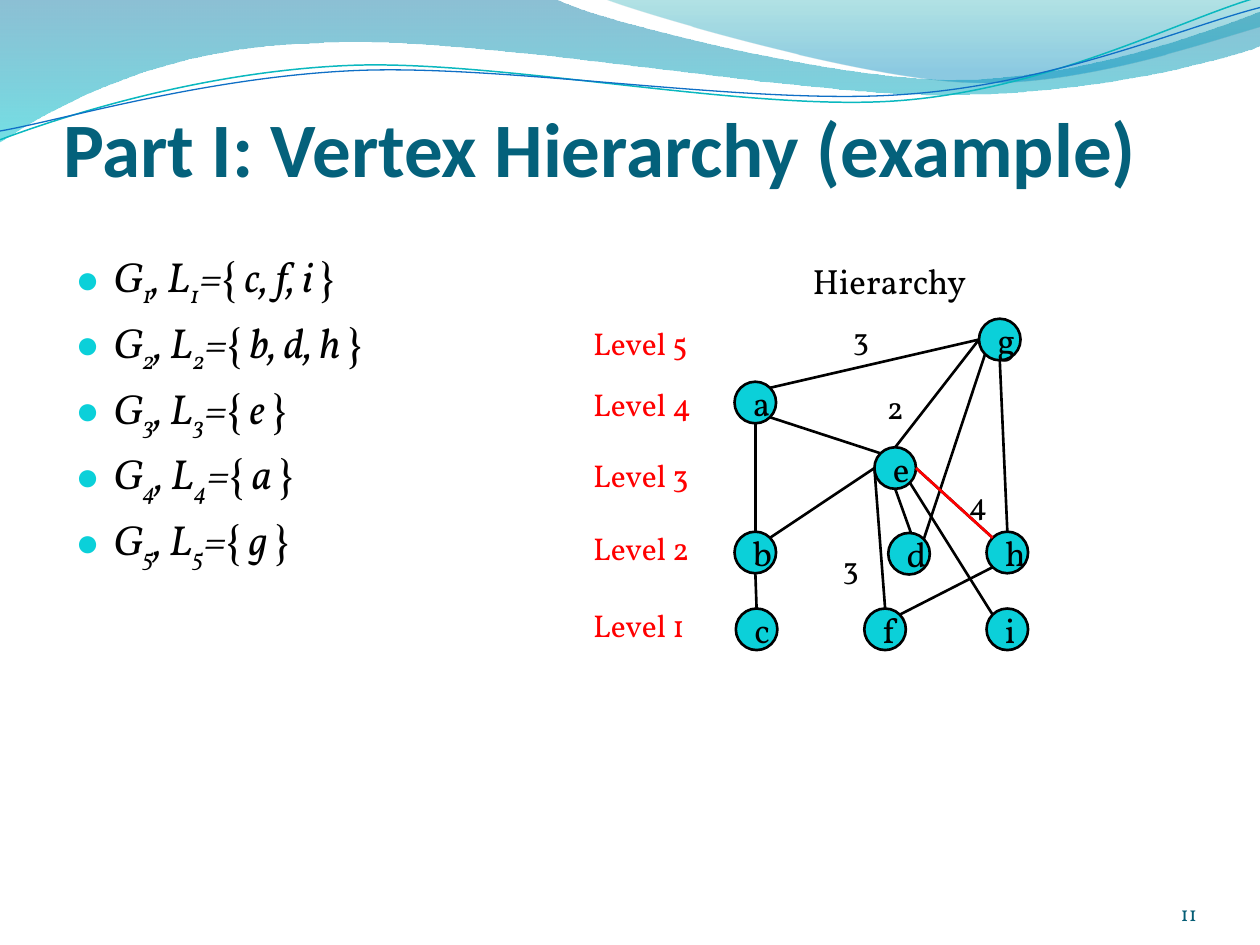
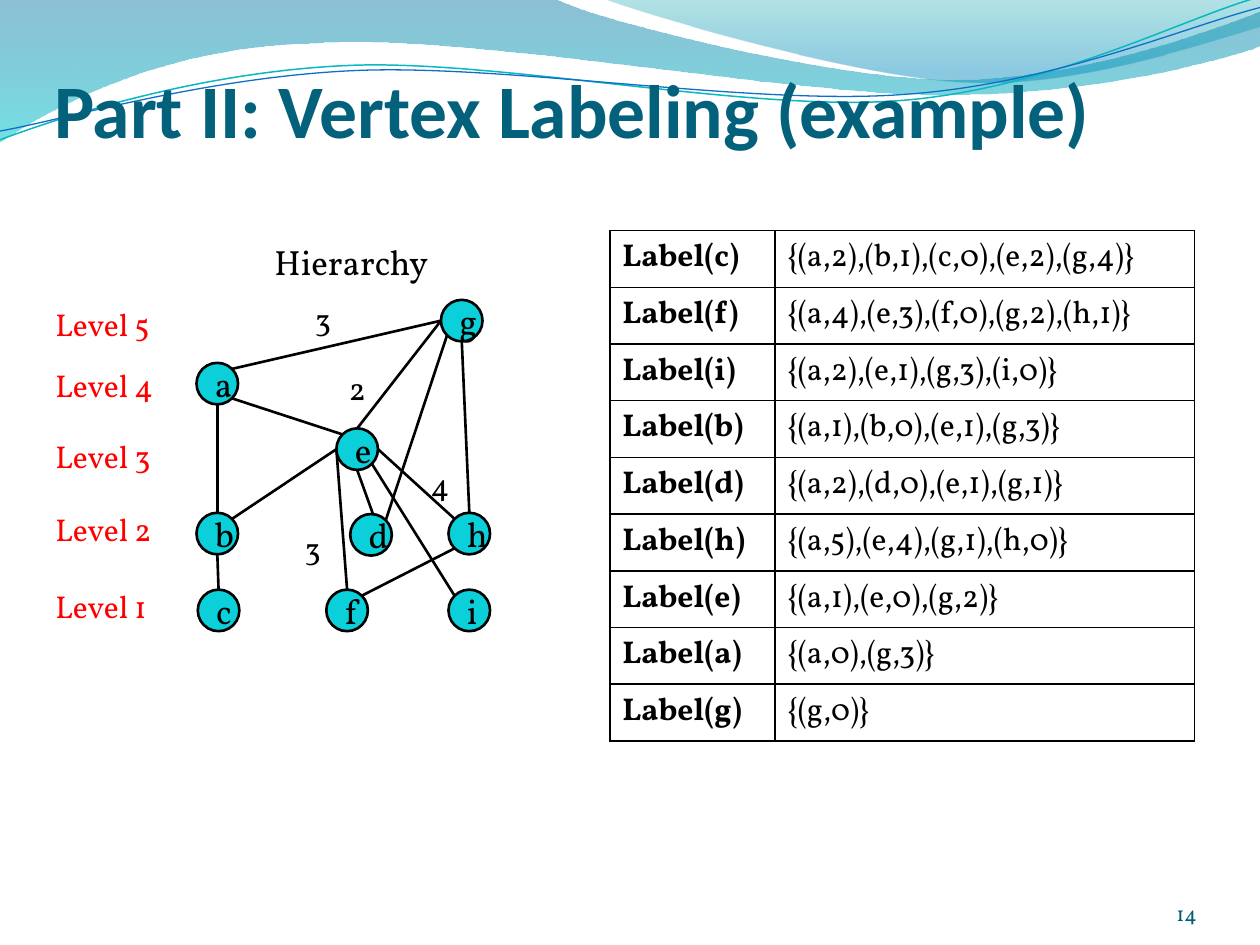
from dataclasses import dataclass
from typing import NamedTuple, Optional

from lxml import etree
from pptx import Presentation
from pptx import util as u
from pptx.dml.color import RGBColor
from pptx.enum import shapes, text
from pptx.oxml import ns

COLORS = {
    "ink": "000000", "title": "04617B", "number": "045D75", "level": "FF0000",
    "vertex": "0BD0D9", "teal": "0AB8BF", "blue": "0F6FC6",
    "wave_top": "0074A1", "wave_bottom": "00C6CF",
    "crest_top": "00A1A9", "crest_bottom": "008BBF",
}
SERIF = "Vollkorn"
DIAMETER = 0.33
STROKE = 1.5
ROW_HEIGHT = 0.45


class Stop(NamedTuple):
    position: float
    color: str
    opacity: int


@dataclass
class Wave:
    start: tuple
    steps: list
    stops: tuple = ()
    line: Optional[str] = None
    width: float = 0


class Edge(NamedTuple):
    start: str
    start_side: str
    end: str
    end_side: str


class Label(NamedTuple):
    words: str
    left: float
    top: float
    width: float
    height: float = 0.4
    size: float = 18
    color: str = "ink"


WAVES = [
    Wave((0, 0), [(4.4, -0.01), (4.76, 0.17, 6.64, 0.63, 7.58, 0.63),
                  (8.53, 0.63, 9.58, 0.26, 10, 0.09), (10.01, 0.36),
                  (9.83, 0.44, 8.7, 0.76, 7.46, 0.75), (6.22, 0.75, 3.82, 0.28, 2.57, 0.34),
                  (1.29, 0.36, 0.46, 0.83, -0.01, 1.13), (0, 0)],
         (Stop(0, "wave_top", 45), Stop(1, "wave_bottom", 55))),
    Wave((4.79, -0.01), [(5.09, 0.11, 6.82, 0.62, 7.69, 0.65),
                         (8.56, 0.69, 9.61, 0.32, 10, 0.21), (10, 0), (4.79, -0.01)],
         (Stop(0, "crest_top", 30), Stop(0.8, "crest_bottom", 45))),
    Wave((0, 1.11), [(0.48, 0.93, 1.58, 0.57, 2.77, 0.52), (3.95, 0.47, 5.93, 0.89, 7.13, 0.8),
                     (8.33, 0.71, 9.38, 0.15, 9.98, -0.02)], line="teal", width=0.85),
    Wave((0, 1.04), [(0.47, 0.96, 1.64, 0.61, 2.83, 0.56), (4.03, 0.51, 5.97, 0.84, 7.17, 0.75),
                     (8.36, 0.67, 9.41, 0.21, 10, 0.06)], line="blue", width=0.75),
]

VERTICES = {
    "a": (1.56, 2.88), "b": (1.56, 4.07), "c": (1.57, 4.68), "d": (2.78, 4.08),
    "e": (2.67, 3.4), "f": (2.59, 4.68), "g": (3.5, 2.38), "h": (3.56, 4.07),
    "i": (3.56, 4.68),
}
SIDES = {
    "top": (0, -1), "left": (-1, 0), "bottom": (0, 1), "right": (1, 0),
    "top left": (-0.71, -0.71), "top right": (0.71, -0.71),
    "bottom left": (-0.71, 0.71), "bottom right": (0.71, 0.71),
    "inner top": (0.2, -0.7),
}
HEAVY_EDGE = Edge("h", "top left", "e", "right")
EDGES = [
    Edge("e", "left", "f", "top"), Edge("e", "bottom", "d", "inner top"),
    HEAVY_EDGE, Edge("g", "left", "a", "top right"),
    Edge("e", "top", "g", "left"), Edge("a", "bottom", "b", "top"),
    Edge("b", "bottom", "c", "top"), Edge("g", "bottom left", "d", "top right"),
    Edge("e", "bottom right", "i", "top left"), Edge("g", "bottom", "h", "top"),
    Edge("h", "bottom left", "f", "top right"), Edge("e", "top left", "a", "bottom right"),
    Edge("e", "left", "b", "top right"),
]
LEVEL_TOPS = [4.61, 4, 3.42, 2.86, 2.37]
LABELS = [
    Label("3", 2.4, 2.33, 0.3), Label("2", 2.67, 2.88, 0.3),
    Label("4", 3.32, 3.64, 0.3), Label("3", 2.32, 4.15, 0.3),
    *[Label(f"Level {level}", 0.34, top, 1.18, color="level")
      for level, top in enumerate(LEVEL_TOPS, 1)],
    Label("Hierarchy", 2.08, 1.86, 1.61, 0.44, 20),
]
LEVEL_SETS = ["c, f, i", "b, d, h", "e", "a", "g"]
VERTEX_LABELS = {
    "c": "{(a,2),(b,1),(c,0),(e,2),(g,4)}",
    "f": "{(a,4),(e,3),(f,0),(g,2),(h,1)}",
    "i": "{(a,2),(e,1),(g,3),(i,0)}",
    "b": "{(a,1),(b,0),(e,1),(g,3)}",
    "d": "{(a,2),(d,0),(e,1),(g,1)}",
    "h": "{(a,5),(e,4),(g,1),(h,0)}",
    "e": "{(a,1),(e,0),(g,2)}",
    "a": "{(a,0),(g,3)}",
    "g": "{(g,0)}",
}


def rgb(name: str) -> RGBColor:
    return RGBColor.from_string(COLORS[name])


def assign(target, **values) -> None:
    for name, value in values.items():
        setattr(target, name, value)


def write(para, words: str, size: float, color: str = "ink", name: str = SERIF, **values) -> None:
    span = para.add_run()
    span.text = words
    assign(span.font, size=u.Pt(size), name=name, **values)
    span.font.color.rgb = rgb(color)


def place(box, left: float, top: float, width: float, height: float) -> None:
    assign(box, left=u.Inches(left), top=u.Inches(top),
           width=u.Inches(width), height=u.Inches(height))


def stroke(line, color: str, width: float = STROKE) -> None:
    line.color.rgb = rgb(color)
    line.width = u.Pt(width)


def bend(shape, steps: list) -> None:
    segments = iter(shape.element.xpath(".//a:lnTo"))
    for step in steps:
        first = next(segments)
        if len(step) == 6:
            curve = etree.Element(ns.qn("a:cubicBezTo"))
            first.addprevious(curve)
            for segment in (first, next(segments), next(segments)):
                curve.append(segment[0])
                segment.getparent().remove(segment)


def draw_waves(deck, page) -> None:
    tree = deck.slide_master.shapes.element
    for index, wave in enumerate(WAVES):
        points = [(u.Inches(step[at]), u.Inches(step[at + 1]))
                  for step in wave.steps for at in range(0, len(step), 2)]
        builder = page.shapes.build_freeform(*map(u.Inches, wave.start))
        builder.add_line_segments(points, close=bool(wave.stops))
        shape = builder.convert_to_shape()
        bend(shape, wave.steps)
        shape.name = f"Wave {index + 1}"
        shape.shadow.inherit = False
        if wave.stops:
            shape.line.fill.background()
            shape.fill.gradient()
            shape.fill.gradient_angle = 270
            for mark, stop in zip(shape.fill.gradient_stops, wave.stops):
                mark.position = stop.position
                mark.color.rgb = rgb(stop.color)
            for color, stop in zip(shape.element.xpath(".//a:gs/a:srgbClr"), wave.stops):
                etree.SubElement(color, ns.qn("a:alpha"), val=str(stop.opacity * 1000))
        else:
            shape.fill.background()
            stroke(shape.line, wave.line, wave.width)
        shape.element.nvSpPr.cNvPr.set("id", str(101 + index))
        tree.insert(2 + index, shape.element)


def set_title(page, words: str, left: float, top: float, size: float) -> None:
    box = page.shapes.title
    place(box, left, top, 9, 1.25)
    frame = box.text_frame
    assign(frame, vertical_anchor=text.MSO_ANCHOR.BOTTOM, auto_size=text.MSO_AUTO_SIZE.NONE,
           margin_left=0, margin_right=0, margin_bottom=0, margin_top=u.Inches(0.05))
    para = frame.paragraphs[0]
    para.alignment = text.PP_ALIGN.LEFT
    write(para, words, size, "title", "Calibri", bold=True)


def add_number(page, number: int) -> None:
    box = page.shapes.add_textbox(*map(u.Inches, (8.67, 6.95, 0.83, 0.4)))
    assign(box.text_frame, word_wrap=True, vertical_anchor=text.MSO_ANCHOR.BOTTOM,
           margin_left=0, margin_right=0, margin_top=0, margin_bottom=0)
    para = box.text_frame.paragraphs[0]
    para.alignment = text.PP_ALIGN.RIGHT
    write(para, str(number), 12, "number")


def fill_level_sets(box) -> None:
    place(box, 0.5, 1.94, 9, 3.41)
    frame = box.text_frame
    for level, members in enumerate(LEVEL_SETS, 1):
        para = frame.paragraphs[0] if level == 1 else frame.add_paragraph()
        para.alignment = text.PP_ALIGN.LEFT
        for words, italic in (("G", True), (str(level), True), (", L", True), (str(level), True),
                              ("=", True), ("{ ", False), (f"{members} ", True), ("}", False)):
            write(para, words, 24, italic=italic)
    for props in box.element.xpath(".//a:r[number(a:t) > 0]/a:rPr"):
        props.set("baseline", "-25000")
    for props in box.element.xpath(".//a:pPr"):
        props.set("marL", str(u.Inches(0.3)))
        props.set("indent", str(u.Inches(-0.3)))
        color = etree.SubElement(props, ns.qn("a:buClr"))
        etree.SubElement(color, ns.qn("a:srgbClr"), val=COLORS["vertex"])
        etree.SubElement(props, ns.qn("a:buSzPct"), val="95000")
        etree.SubElement(props, ns.qn("a:buChar"), char="●")


def draw_edge(parent, edge: Edge, dx: float, dy: float, color: str = "ink") -> None:
    ends = [u.Inches(corner + shift + DIAMETER / 2 * (1 + unit))
            for vertex, side in (edge[:2], edge[2:])
            for corner, shift, unit in zip(VERTICES[vertex], (dx, dy), SIDES[side])]
    line = parent.shapes.add_connector(shapes.MSO_CONNECTOR.STRAIGHT, *ends)
    stroke(line.line, color)
    etree.SubElement(line.element.spPr, ns.qn("a:effectLst"))


def draw_hierarchy(page, dx: float = 0, dy: float = 0) -> None:
    group = page.shapes.add_group_shape()
    for edge in EDGES:
        draw_edge(group, edge, dx, dy)
    for vertex, (left, top) in VERTICES.items():
        node = group.shapes.add_shape(
            shapes.MSO_SHAPE.OVAL,
            *map(u.Inches, (left + dx, top + dy, DIAMETER, DIAMETER)))
        node.shadow.inherit = False
        node.fill.solid()
        node.fill.fore_color.rgb = rgb("vertex")
        stroke(node.line, "ink")
        para = node.text_frame.paragraphs[0]
        para.alignment = text.PP_ALIGN.CENTER
        write(para, vertex, 20)
    for label in LABELS:
        box = group.shapes.add_textbox(
            *map(u.Inches, (label.left + dx, label.top + dy, label.width, label.height)))
        assign(box.text_frame, word_wrap=True, auto_size=text.MSO_AUTO_SIZE.SHAPE_TO_FIT_TEXT)
        write(box.text_frame.paragraphs[0], label.words, label.size, label.color)


def add_label_table(page) -> None:
    count = len(VERTEX_LABELS)
    frame = page.shapes.add_table(count, 2,
                                  *map(u.Inches, (4.84, 1.83, 4.64, count * ROW_HEIGHT)))
    table = frame.table
    assign(table, first_row=False, horz_banding=False)
    for column, width in zip(table.columns, (1.31, 3.33)):
        column.width = u.Inches(width)
    for row, (vertex, entries) in enumerate(VERTEX_LABELS.items()):
        for column, words in enumerate((f"Label({vertex})", entries)):
            cell = table.cell(row, column)
            cell.fill.background()
            write(cell.text_frame.paragraphs[0], words, 18, bold=column == 0)
    for props in frame.element.xpath(".//a:tcPr"):
        for index, side in enumerate("LRTB"):
            border = etree.Element(ns.qn(f"a:ln{side}"), w=str(u.Pt(1)))
            fill = etree.SubElement(border, ns.qn("a:solidFill"))
            etree.SubElement(fill, ns.qn("a:srgbClr"), val=COLORS["ink"])
            props.insert(index, border)


def main() -> None:
    deck = Presentation()
    assign(deck, slide_width=u.Inches(10), slide_height=u.Inches(7.5))

    page = deck.slides.add_slide(deck.slide_layouts[1])
    draw_waves(deck, page)
    set_title(page, "Part I: Vertex Hierarchy (example)", 0.5, 0.28, 44)
    fill_level_sets(page.placeholders[1])
    add_number(page, 11)
    shift = (4.27, 0.15)
    draw_hierarchy(page, *shift)
    draw_edge(page, HEAVY_EDGE, *shift, "level")

    page = deck.slides.add_slide(deck.slide_layouts[5])
    set_title(page, "Part II: Vertex Labeling (example)", 0.43, -0.03, 43.2)
    add_number(page, 14)
    add_label_table(page)
    draw_hierarchy(page)

    deck.save("out.pptx")


if __name__ == "__main__":
    main()
